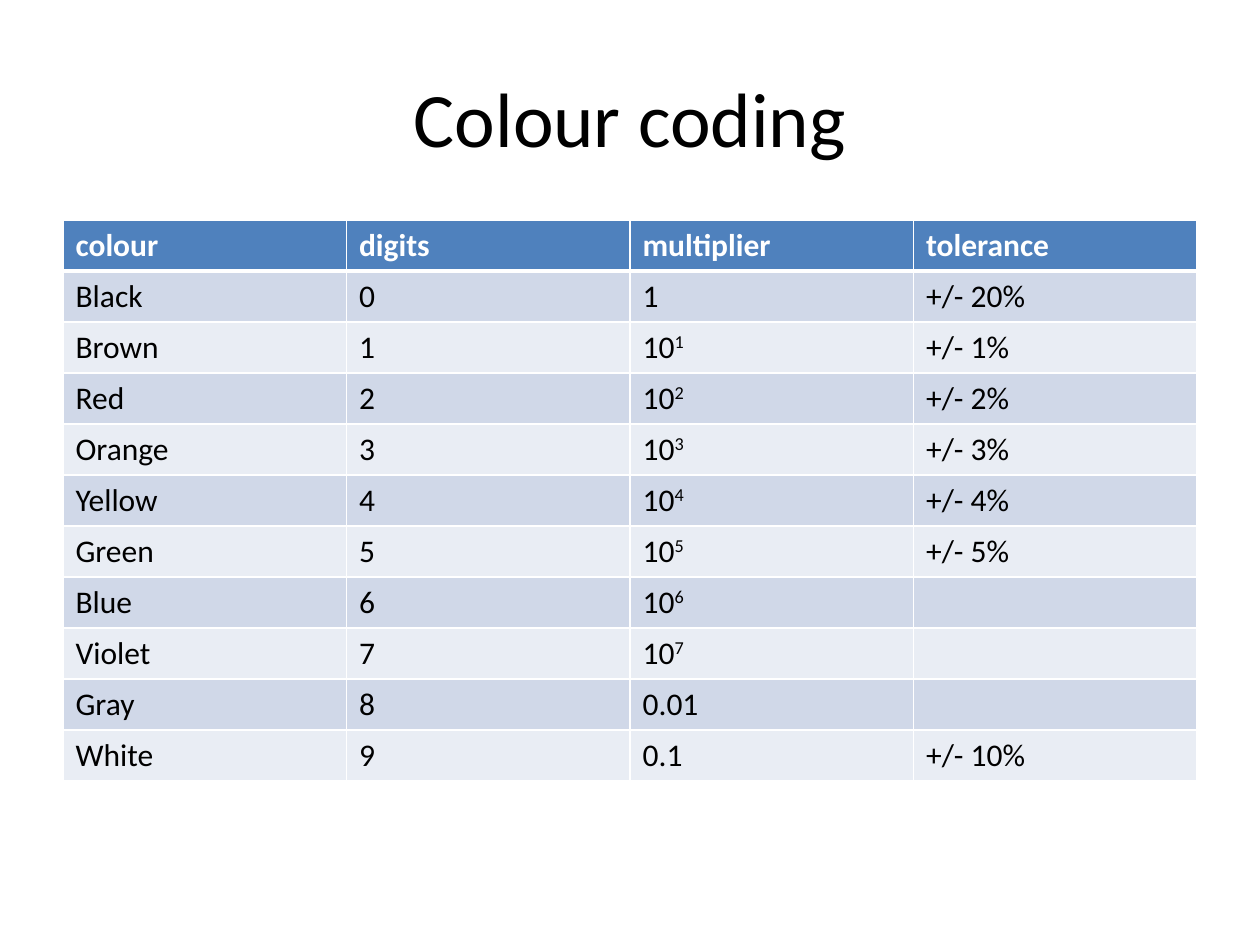
from lxml.etree import SubElement
from pptx import Presentation
from pptx.dml.color import RGBColor
from pptx.enum.text import MSO_ANCHOR as Anchor, PP_ALIGN as Align
from pptx.oxml.ns import qn
from pptx.util import Emu, Pt

WHITE = RGBColor(0xFF, 0xFF, 0xFF)
BLACK = RGBColor(0x00, 0x00, 0x00)
HEADER_BLUE = RGBColor(0x4F, 0x81, 0xBD)
BANDS = (RGBColor(0xD0, 0xD8, 0xE8), RGBColor(0xE9, 0xED, 0xF4))

HEADER = ("colour", "digits", "multiplier", "tolerance")
COLOURS = ("Black", "Brown", "Red", "Orange", "Yellow",
           "Green", "Blue", "Violet", "Gray", "White")
# A caret starts a superscript exponent
MULTIPLIERS = ("1", *(f"10^{power}" for power in range(1, 8)), "0.01", "0.1")
TOLERANCES = ("20", "1", "2", "3", "4", "5", "", "", "", "10")


def px(length):
    return Emu(round(length * 914400 / 126))


class SlideBuilder:
    font_name = "Calibri"

    def __init__(self, slide):
        self.slide = slide

    def style(self, paragraph, size, colour, bold=False):
        font = paragraph.font
        font.name, font.size, font.bold = self.font_name, Pt(size), bold
        font.color.rgb = colour

    def title(self, text, left, top, width, height):
        box = self.slide.shapes.add_textbox(px(left), px(top), px(width), px(height))
        frame = box.text_frame
        frame.word_wrap = True
        frame.vertical_anchor = Anchor.MIDDLE
        paragraph = frame.paragraphs[0]
        paragraph.text = text
        paragraph.alignment = Align.CENTER
        self.style(paragraph, 44, BLACK)

    def borders(self, cell, widths):
        properties = cell._tc.get_or_add_tcPr()
        for side, width in zip("LRTB", widths):
            line = SubElement(properties, qn(f"a:ln{side}"), w=str(Pt(width)))
            fill = SubElement(line, qn("a:solidFill"))
            SubElement(fill, qn("a:srgbClr"), val=str(WHITE))

    def cell(self, cell, text, fill, colour, bold, widths):
        self.borders(cell, widths)
        cell.fill.solid()
        cell.fill.fore_color.rgb = fill
        paragraph = cell.text_frame.paragraphs[0]
        self.style(paragraph, 18, colour, bold)
        base, _, exponent = text.partition("^")
        if base:
            paragraph.add_run().text = base
        if exponent:
            raised = paragraph.add_run()
            raised.text = exponent
            raised.font._element.set("baseline", "30000")

    def table(self, rows, left, top, width, row_height):
        table = self.slide.shapes.add_table(
            len(rows), len(rows[0]), px(left), px(top),
            px(width), px(row_height * len(rows))).table
        for r, row in enumerate(rows):
            is_header = r == 0
            fill = HEADER_BLUE if is_header else BANDS[(r - 1) % 2]
            colour = WHITE if is_header else BLACK
            widths = (1, 1, 3 if r == 1 else 1, 3 if is_header else 1)
            for c, text in enumerate(row):
                self.cell(table.cell(r, c), text, fill, colour, is_header, widths)


def main():
    presentation = Presentation()
    presentation.slide_width, presentation.slide_height = px(1260), px(945)
    builder = SlideBuilder(presentation.slides.add_slide(presentation.slide_layouts[6]))

    # Heading
    builder.title("Colour coding", 63, 38, 1134, 158)

    # Colour code table: each colour's digit is its position in the list
    rows = [HEADER]
    for digit, (name, multiplier, tolerance) in enumerate(
            zip(COLOURS, MULTIPLIERS, TOLERANCES)):
        rows.append((name, str(digit), multiplier,
                     f"+/- {tolerance}%" if tolerance else ""))
    builder.table(rows, 63, 220, 1134, 51)

    presentation.save("out.pptx")


if __name__ == "__main__":
    main()
